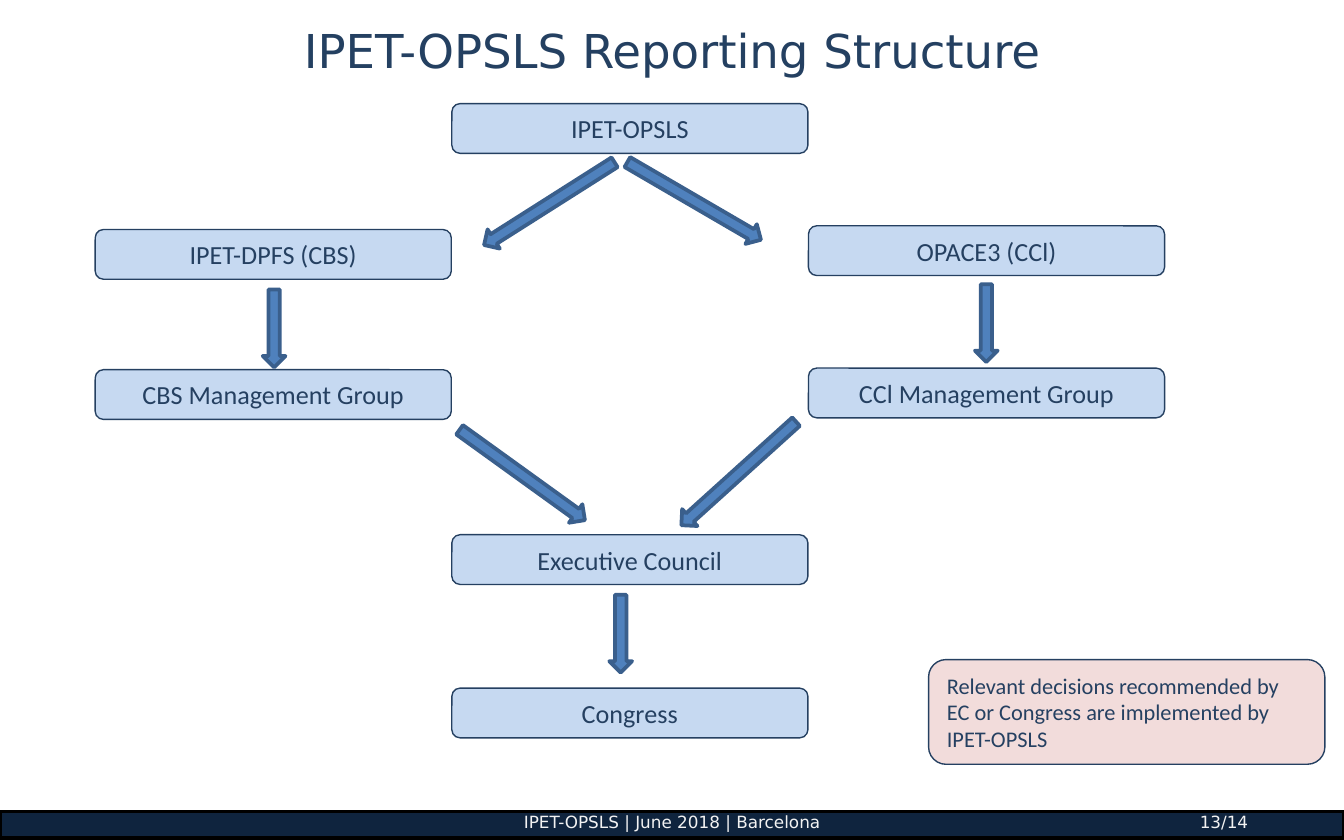
import pptx
import pptx.dml.color
import pptx.enum.shapes
import pptx.enum.text
import pptx.oxml
import pptx.oxml.ns
import pptx.util

Cm = pptx.util.Cm
Pt = pptx.util.Pt
SHAPES = pptx.enum.shapes.MSO_SHAPE
ALIGN = pptx.enum.text.PP_ALIGN
ANCHOR = pptx.enum.text.MSO_ANCHOR
COLOURS = {
    "title": "244061",
    "text": "254061",
    "unit": "C6D9F1",
    "note": "F2DCDB",
    "arrow": "4F81BD",
    "arrow_line": "3A5F8C",
    "footer": "0F243E",
    "footer_line": "000000",
    "footer_text": "F2F2F2",
}
WIDTH, HEIGHT = 25.4, 15.88
UNIT_WIDTH, UNIT_HEIGHT, COLUMN_STEP = 6.73, 0.94, 6.74
ARROW_HEIGHT, SHORT, LONG = 0.43, 1.47, 2.92
UNITS = [
    ("IPET-OPSLS", 1, 0),
    ("IPET-DPFS (CBS)", 0, 2.38),
    ("OPACE3 (CCl)", 2, 2.31),
    ("CBS Management Group", 0, 5.03),
    ("CCl Management Group", 2, 5),
    ("Executive Council", 1, 8.15),
    ("Congress", 1, 11.05),
]
ARROWS = [
    (8.58, 1.89, LONG, 147.6),
    (11.32, 1.84, LONG, 30.2),
    (3.38, 4.25, SHORT, 90),
    (16.84, 4.15, SHORT, 90),
    (9.93, 10.02, SHORT, 90),
    (8.07, 7.02, LONG, 35.8),
    (12.16, 6.99, LONG, 137.9),
]


def colour(name):
    """Return the named colour as an RGB value."""
    return pptx.dml.color.RGBColor.from_string(COLOURS[name])


def add_filled(slide, kind, box, fill, line, line_width):
    """Add a filled and outlined preset shape in a box given in centimetres."""
    shape = slide.shapes.add_shape(kind, *map(Cm, box))
    shape.shadow.inherit = False
    shape.fill.solid()
    shape.fill.fore_color.rgb = colour(fill)
    shape.line.color.rgb = colour(line)
    shape.line.width = Pt(line_width)
    return shape


def write(shape, text, size, font, text_colour, align):
    """Write one wrapped paragraph into a shape and return the paragraph."""
    frame = shape.text_frame
    frame.word_wrap = True
    paragraph = frame.paragraphs[0]
    paragraph.alignment = align
    run = paragraph.add_run()
    run.text = text
    run.font.size = Pt(size)
    run.font.name = font
    run.font.color.rgb = colour(text_colour)
    return paragraph


def add_panel(slide, box, text, fill, size, align):
    """Add a rounded panel with a line of text that it fits."""
    panel = add_filled(slide, SHAPES.ROUNDED_RECTANGLE, box, fill, "text", 0.75)
    write(panel, text, size, "Calibri", "text", align)
    panel.text_frame.vertical_anchor = ANCHOR.MIDDLE
    panel.text_frame.auto_size = pptx.enum.text.MSO_AUTO_SIZE.SHAPE_TO_FIT_TEXT


def add_title(slide, box, text):
    """Add the centred slide title."""
    title = slide.shapes.add_textbox(*map(Cm, box))
    write(title, text, 25, "DejaVu Sans", "title", ALIGN.CENTER)
    title.text_frame.vertical_anchor = ANCHOR.MIDDLE


def add_diagram(slide, left, top):
    """Add the reporting units and the arrows between them."""
    for text, column, offset in UNITS:
        box = (left + column * COLUMN_STEP, top + offset, UNIT_WIDTH, UNIT_HEIGHT)
        add_panel(slide, box, text, "unit", 14, ALIGN.CENTER)
    for centre_x, centre_y, length, angle in ARROWS:
        box = (left + centre_x - length / 2, top + centre_y - ARROW_HEIGHT / 2,
               length, ARROW_HEIGHT)
        arrow = add_filled(slide, SHAPES.RIGHT_ARROW, box, "arrow", "arrow_line", 2)
        arrow.rotation = angle


def add_footer(slide, left, top, width, event, page):
    """Add the footer bar with the event centred and the page at the right."""
    inset = 0.2
    add_filled(slide, SHAPES.RECTANGLE, (left, top + 0.1, width, 0.51),
               "footer", "footer_line", 2)
    label = slide.shapes.add_textbox(*map(Cm, (left, top, width, 0.64)))
    frame = label.text_frame
    frame.margin_left = frame.margin_right = Cm(inset)
    frame.margin_top = frame.margin_bottom = Cm(0.1)
    paragraph = write(label, f"\t{event}\t{page}", 9, "DejaVu Sans",
                      "footer_text", ALIGN.LEFT)
    stops = [("ctr", width / 2 - inset), ("r", width - 1.81 - inset)]
    tabs = "".join(f'<a:tab pos="{int(Cm(position))}" algn="{align}"/>'
                   for align, position in stops)
    namespace = pptx.oxml.ns.nsdecls("a")
    properties = paragraph._p.get_or_add_pPr()
    properties.append(pptx.oxml.parse_xml(f"<a:tabLst {namespace}>{tabs}</a:tabLst>"))


def main():
    """Build the reporting structure slide and save it."""
    presentation = pptx.Presentation()
    presentation.slide_width = Cm(WIDTH)
    presentation.slide_height = Cm(HEIGHT)
    slide = presentation.slides.add_slide(presentation.slide_layouts[6])
    add_footer(slide, 0, 15.24, WIDTH, "IPET-OPSLS | June 2018 | Barcelona", "13/14")
    add_title(slide, (1.27, 0.18, 22.86, 1.52), "IPET-OPSLS Reporting Structure")
    add_diagram(slide, 1.8, 1.96)
    add_panel(slide, (17.55, 12.47, 7.49, 1.98),
              "Relevant decisions recommended by EC or Congress "
              "are implemented by IPET-OPSLS", "note", 12, ALIGN.LEFT)
    presentation.save("out.pptx")


if __name__ == "__main__":
    main()
